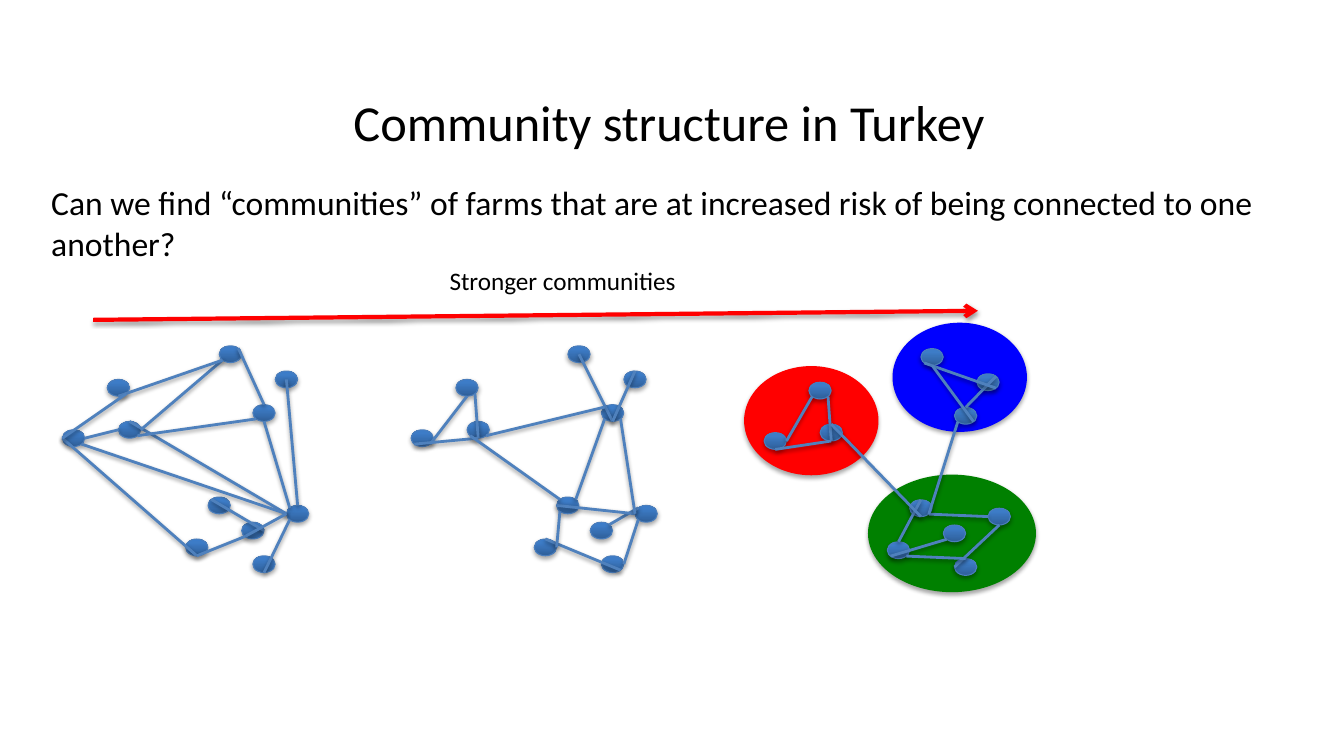
from copy import deepcopy
from dataclasses import dataclass
from math import cos, radians, sin

from lxml.etree import SubElement
from pptx import Presentation
from pptx.dml.color import RGBColor as Rgb
from pptx.enum.shapes import MSO_CONNECTOR as Connector, MSO_SHAPE as Shape
from pptx.enum.text import MSO_ANCHOR as Anchor, PP_ALIGN as Align
from pptx.oxml.ns import qn
from pptx.util import Pt


@dataclass(frozen=True)
class Theme:
    font: str = "Calibri"
    text: str = "000000"
    title_size: int = 36
    body_size: int = 24
    label_size: int = 18
    farm_stops: tuple = ((0, "2F5F99"), (0.8, "3D7CC7"), (1, "3A7CCB"))
    farm_line: str = "4B7EBC"
    link: str = "4F81BD"
    arrow: str = "FF0000"
    green: str = "008000"
    blue: str = "0000FF"
    red: str = "FF0000"


THEME = Theme()
FARM_WIDTH, FARM_HEIGHT = 16, 12
FARMS = {
    "a": (40, 54), "b": (32, 24), "c": (0, 60), "d": (112, 0),
    "e": (152, 18), "f": (136, 42), "g": (88, 138), "h": (104, 108),
    "i": (160, 114), "j": (136, 150), "k": (128, 126),
}
COMPASS = {name: 45 * step for step, name in
           enumerate(("E", "SE", "S", "SW", "W", "NW", "N", "NE"))}
WEAK_LINKS = ("iNW-fS iW-aN iN-e aSE-fSW iW-cSE kE-hNW iW-kSW iSW-jS cW-gS "
              "kSW-gS aE-dSW bS-dSW fN-dNE cW-bSE aW-cE")
MEDIUM_LINKS = ("d-fS eN-fS bSE-aS bS-cSE fNW-aSE aS-cSW fSW-hNE iNW-kNE "
                "iSW-jE gN-jSE hSW-gE hW-iW aSW-hNW fSE-iW")
STRONG_LINKS = ("cE-bSW aS-bSE cS-aS fN-eNE dSW-eSE dS-fSE hSE-iW jW-iS "
                "gSW-kSW gSE-jN gN-hN aN-hS fSW-hSE")


def add_shadow(shape, opacity, distance):
    effects = SubElement(shape._element.spPr, qn("a:effectLst"))
    shadow = SubElement(effects, qn("a:outerShdw"), blurRad=str(Pt(3.15)),
                        dist=str(Pt(distance)), dir="5400000", rotWithShape="0")
    color = SubElement(shadow, qn("a:srgbClr"), val="000000")
    SubElement(color, qn("a:alpha"), val=str(opacity * 1000))


def add_ellipse(shapes, left, top, width, height):
    return shapes.add_shape(Shape.OVAL, Pt(left), Pt(top), Pt(width), Pt(height))


def add_community(page, left, top, width, height, color):
    ellipse = add_ellipse(page.shapes, left, top, width, height)
    ellipse.fill.solid()
    ellipse.fill.fore_color.rgb = Rgb.from_string(color)
    ellipse.line.fill.background()
    add_shadow(ellipse, 35, 1.8)


def add_farm(shapes, left, top):
    farm = add_ellipse(shapes, left, top, FARM_WIDTH, FARM_HEIGHT)
    farm.fill.gradient()
    farm.fill.gradient_angle = 90
    stop_list = next(farm._element.spPr.iter(qn("a:gsLst")))
    stop_list.append(deepcopy(stop_list[0]))
    for stop, (position, color) in zip(farm.fill.gradient_stops, THEME.farm_stops):
        stop.position = position
        stop.color.rgb = Rgb.from_string(color)
    farm.line.color.rgb = Rgb.from_string(THEME.farm_line)
    farm.line.width = Pt(0.75)
    add_shadow(farm, 35, 1.8)


def add_line(shapes, start, end, color, width, arrow=False):
    line = shapes.add_connector(Connector.STRAIGHT, *map(Pt, start + end))
    line.line.color.rgb = Rgb.from_string(color)
    line.line.width = Pt(width)
    if arrow:
        SubElement(line.line._get_or_add_ln(), qn("a:tailEnd"), type="arrow")
    add_shadow(line, 38, 1.6)


def farm_point(place, left, top):
    x, y = FARMS[place[0]]
    x += left + FARM_WIDTH / 2
    y += top + FARM_HEIGHT / 2
    if place[1:]:
        angle = radians(COMPASS[place[1:]])
        x += FARM_WIDTH / 2 * cos(angle)
        y += FARM_HEIGHT / 2 * sin(angle)
    return x, y


def add_network(page, left, top, links):
    shapes = page.shapes.add_group_shape().shapes
    for x, y in FARMS.values():
        add_farm(shapes, left + x, top + y)
    for link in links.split():
        start, end = (farm_point(place, left, top) for place in link.split("-"))
        add_line(shapes, start, end, THEME.link, 2)


def write(box, text, size, align=Align.LEFT, anchor=Anchor.TOP, wrap=True):
    frame = box.text_frame
    frame.word_wrap = wrap
    frame.vertical_anchor = anchor
    para = frame.paragraphs[0]
    para.alignment = align
    span = para.add_run()
    span.text = text
    span.font.name = THEME.font
    span.font.size = Pt(size)
    span.font.color.rgb = Rgb.from_string(THEME.text)


def add_text(page, left, top, width, height, text, size, **style):
    box = page.shapes.add_textbox(Pt(left), Pt(top), Pt(width), Pt(height))
    write(box, text, size, **style)


def set_title(page, text):
    title = page.shapes.title
    title.left, title.top, title.width, title.height = map(Pt, (46, 51, 864, 72))
    write(title, text, THEME.title_size, align=Align.CENTER, anchor=Anchor.MIDDLE)


def main():
    deck = Presentation()
    deck.slide_width, deck.slide_height = Pt(960), Pt(540)
    page = deck.slides.add_slide(deck.slide_layouts[5])
    set_title(page, "Community structure in Turkey")

    add_community(page, 620, 339, 120, 84, THEME.green)
    add_community(page, 637.5, 230.5, 96, 78, THEME.blue)
    add_community(page, 531.5, 261.5, 96, 78, THEME.red)
    add_network(page, 44.6, 247, WEAK_LINKS)
    add_text(page, 29.5, 126.7, 915, 65.5,
             "Can we find “communities” of farms that are at increased risk "
             "of being connected to one another?", THEME.body_size)
    add_network(page, 293.6, 247, MEDIUM_LINKS)
    add_network(page, 545.8, 249, STRONG_LINKS)
    add_line(page.shapes, (66.5, 228.5), (698.5, 222), THEME.arrow, 3, arrow=True)
    add_text(page, 314, 186, 178.5, 29, "Stronger communities",
             THEME.label_size, wrap=False)
    deck.save("out.pptx")


if __name__ == "__main__":
    main()
